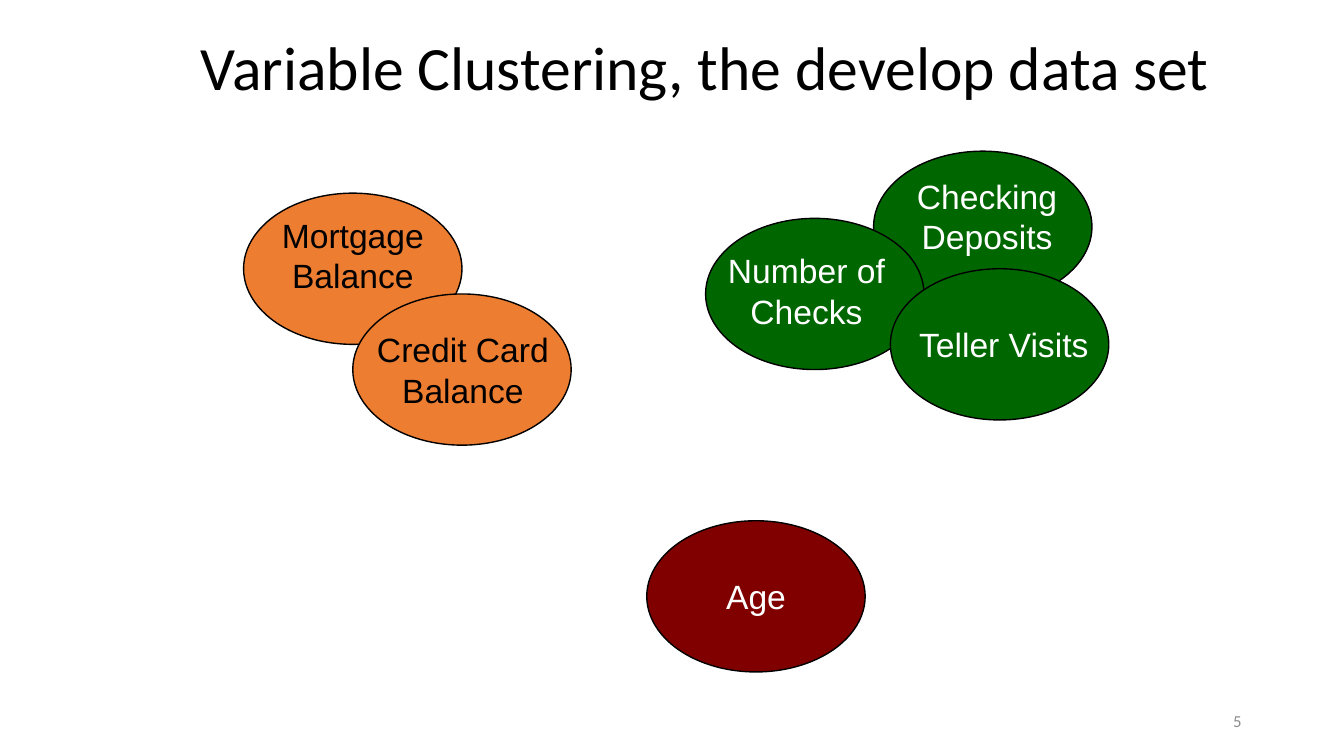
from dataclasses import dataclass

from pptx import Presentation
from pptx.dml.color import RGBColor
from pptx.enum.shapes import MSO_SHAPE as Shape
from pptx.enum.text import MSO_ANCHOR as Anchor, PP_ALIGN as Align
from pptx.util import Inches, Pt


@dataclass(frozen=True)
class Theme:
    black: str = "000000"
    white: str = "FFFFFF"
    grey: str = "8C8C8C"
    orange: str = "ED7D31"
    green: str = "006600"
    red: str = "800000"
    heading_font: str = "Calibri"
    label_font: str = "Arial"
    title_size: int = 44
    label_size: int = 24
    number_size: int = 12
    outline: int = 1


THEME = Theme()
COLUMNS, ROWS = 160, 90
OVAL_SIZE = (26, 18)

TITLE = ("Variable Clustering, the develop data set", (22.7, 0.9, 122.6, 15))
PAGE_NUMBER = ("5", (113, 83.4, 36, 4.8))

CLUSTERS = [
    (THEME.orange, THEME.black, [
        ("Mortgage Balance", (29, 23), (30, 25, 24, 10.9)),
        ("Credit Card Balance", (42, 35), (43.1, 38.6, 24, 10.9)),
    ]),
    (THEME.green, THEME.white, [
        ("Checking Deposits", (104, 18), (105.5, 20.3, 24, 10.9)),
        ("Number of Checks", (84, 26), (82, 29.2, 28, 10.9)),
        ("Teller Visits", (106, 32), (106, 38, 27, 6)),
    ]),
    (THEME.red, THEME.white, [
        ("Age", (77, 62), (78, 68, 24, 6)),
    ]),
]

presentation = Presentation()
presentation.slide_width = Inches(13.33)
presentation.slide_height = Inches(7.5)
slide = presentation.slides.add_slide(presentation.slide_layouts[6])
column = presentation.slide_width / COLUMNS
row = presentation.slide_height / ROWS


def place(left, top, width, height):
    return (round(left * column), round(top * row),
            round(width * column), round(height * row))


def add_text(text, box, font, size, color, align, anchor=Anchor.TOP):
    frame = slide.shapes.add_textbox(*place(*box)).text_frame
    frame.word_wrap = True
    frame.vertical_anchor = anchor
    paragraph = frame.paragraphs[0]
    paragraph.text = text
    paragraph.alignment = align
    paragraph.font.name = font
    paragraph.font.size = Pt(size)
    paragraph.font.color.rgb = RGBColor.from_string(color)
    return paragraph


def add_oval(position, color):
    oval = slide.shapes.add_shape(Shape.OVAL, *place(*position, *OVAL_SIZE))
    oval.shadow.inherit = False
    oval.fill.solid()
    oval.fill.fore_color.rgb = RGBColor.from_string(color)
    oval.line.color.rgb = RGBColor.from_string(THEME.black)
    oval.line.width = Pt(THEME.outline)


title = add_text(*TITLE, THEME.heading_font, THEME.title_size, THEME.black,
                 Align.LEFT, Anchor.MIDDLE)
title.line_spacing = 0.9
add_text(*PAGE_NUMBER, THEME.heading_font, THEME.number_size, THEME.grey,
         Align.RIGHT, Anchor.MIDDLE)

for fill, ink, variables in CLUSTERS:
    for name, position, box in variables:
        add_oval(position, fill)
for fill, ink, variables in CLUSTERS:
    for name, position, box in variables:
        add_text(name, box, THEME.label_font, THEME.label_size, ink, Align.CENTER)

presentation.save("out.pptx")
